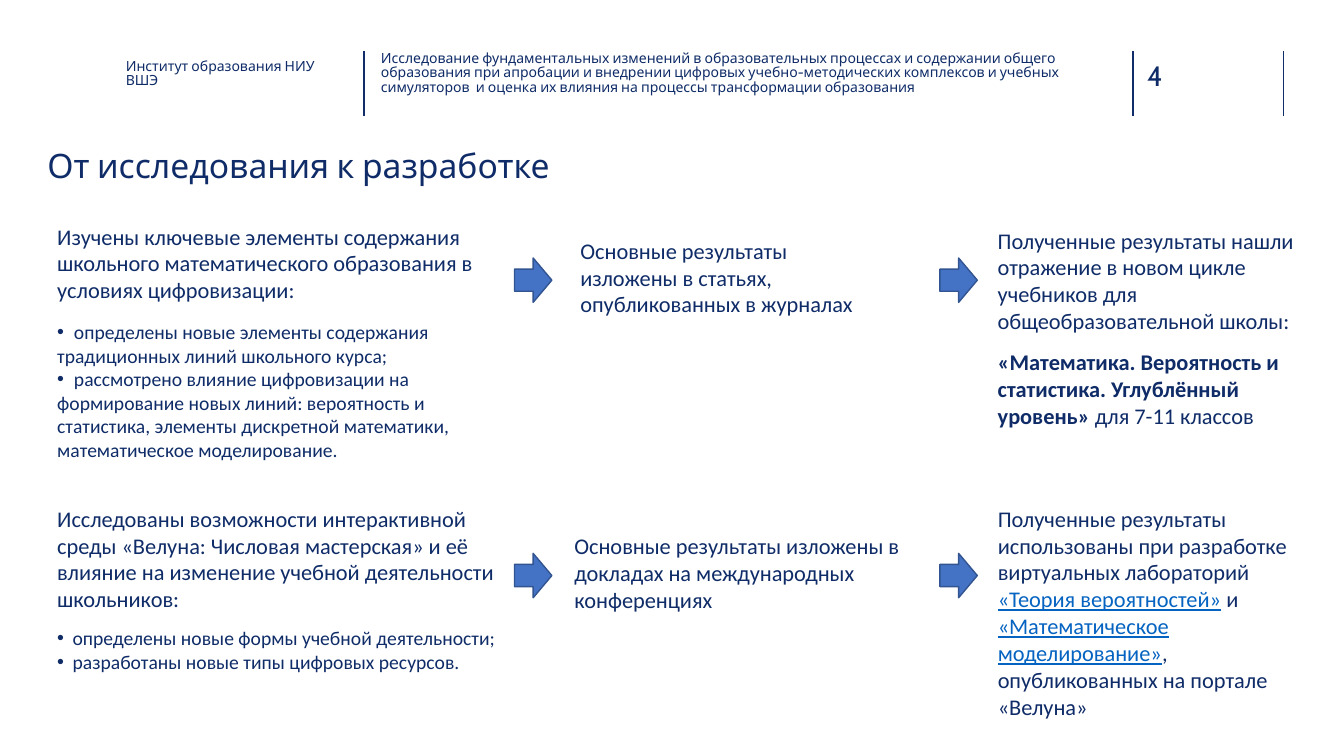
from pptx import Presentation
from pptx.dml.color import RGBColor
from pptx.enum.shapes import MSO_CONNECTOR, MSO_SHAPE
from pptx.enum.text import MSO_ANCHOR, MSO_AUTO_SIZE, PP_ALIGN
from pptx.util import Pt
from lxml import etree

LINE = MSO_CONNECTOR.STRAIGHT
ARROW = MSO_SHAPE.RIGHT_ARROW
TOP, MIDDLE = MSO_ANCHOR.TOP, MSO_ANCHOR.MIDDLE
FIXED = MSO_AUTO_SIZE.NONE
LEFT = PP_ALIGN.LEFT
NS = "http://schemas.openxmlformats.org/drawingml/2006/main"
NAVY, RULE, LINK = "0F2C68", "102D69", "0563C1"
BLUE, EDGE = "4472C4", "325491"
HEAD, BODY = "Cabin", "Calibri"


def color(code):
    return RGBColor.from_string(code)


def node(parent, tag, **attrs):
    return etree.SubElement(parent, f"{{{NS}}}{tag}", **attrs)


def add_run(para, text, size, face=BODY, tint=NAVY, bold=False, under=False):
    run = para.add_run()
    run.text = text
    font = run.font
    font.name, font.size, font.bold = face, Pt(size), bold
    font.underline = under
    font.color.rgb = color(tint)


def place(shape, box):
    shape.left, shape.top, shape.width, shape.height = map(Pt, box)


def fill_holder(shape, box, text, size, anchor=TOP, space=0.9):
    """Move a placeholder into the box and give it one plain paragraph."""
    place(shape, box)
    frame = shape.text_frame
    frame.margin_left = frame.margin_right = 0
    frame.margin_top = frame.margin_bottom = 0
    frame.word_wrap = True
    frame.auto_size = FIXED
    frame.vertical_anchor = anchor
    para = frame.paragraphs[0]
    para.alignment = LEFT
    para.space_before = Pt(0)
    para.line_spacing = space
    props = para._p.get_or_add_pPr()
    props.set("marL", "0")
    props.set("indent", "0")
    node(props, "buNone")
    add_run(para, text, size, HEAD)


def add_rule(slide, x, top, height, width=1):
    rule = slide.shapes.add_connector(LINE, Pt(x), Pt(top), Pt(x), Pt(top + height))
    rule.line.color.rgb = color(RULE)
    rule.line.width = Pt(width)
    node(rule._element.spPr, "effectLst")


def add_header(slide, box, unit, topic, number):
    """Header band: unit, topic and page number between upright rules."""
    x, y, w, h = box
    for step in (0, 549.4, w):
        add_rule(slide, x + step, y, h)
    left, right = slide.placeholders[1], slide.placeholders[2]
    fill_holder(left, (x - 170, y + 5.8, 150, 32), unit, 10, space=0.87)
    fill_holder(right, (x + 12.2, y, 523, 52), topic, 10, space=0.87)
    page = slide.shapes.add_textbox(0, 0, 0, 0)
    fill_holder(page, (x + 559.5, y + 5, 52.5, 24.5), number, 20, space=1)


def add_note(slide, box, paras, points=(), gap=9.8, tab=11):
    """Text block: paragraphs of runs, then bulleted points."""
    note = slide.shapes.add_textbox(*map(Pt, box))
    frame = note.text_frame
    frame.word_wrap = True
    for i, runs in enumerate(paras):
        para = frame.paragraphs[0] if i == 0 else frame.add_paragraph()
        if i and gap:
            para.space_before = Pt(gap)
        for text, style in runs:
            add_run(para, text, 16, **style)
    for i, text in enumerate(points):
        para = frame.add_paragraph()
        if i == 0:
            para.space_before = Pt(gap)
        props = para._p.get_or_add_pPr()
        props.set("marL", "0")
        props.set("indent", "0")
        node(props, "buFont", typeface="Arial")
        node(props, "buChar", char="•")
        stops = node(props, "tabLst")
        node(stops, "tab", pos=str(Pt(tab)), algn="l")
        add_run(para, "\t" + text, 14)


def add_arrow(slide, x, y):
    arrow = slide.shapes.add_shape(ARROW, Pt(x), Pt(y), Pt(26.7), Pt(31.7))
    arrow.shadow.inherit = False
    arrow.fill.solid()
    arrow.fill.fore_color.rgb = color(BLUE)
    arrow.line.color.rgb = color(EDGE)
    arrow.line.width = Pt(1)


def add_row(slide, box, study, middle, result, drop):
    """Study, papers and outcome, joined by two arrows."""
    x, y, w, h = box
    add_note(slide, (x, y, 329, h), **study)
    add_note(slide, (x + middle[0], y + middle[1], middle[2], 65.5),
             [[(middle[3], {})]])
    add_note(slide, (x + 671.8, y + result[0], w - 671.8, h),
             result[1], gap=result[2])
    for step in (333.7, 637.6):
        add_arrow(slide, x + step, y + drop)


def main():
    deck = Presentation()
    deck.slide_width, deck.slide_height = Pt(960), Pt(540)
    slide = deck.slides.add_slide(deck.slide_layouts[3])

    # Header and title
    add_header(
        slide, (259.9, 36.7, 656.7, 46.1), "Институт образования НИУ ВШЭ",
        "Исследование фундаментальных изменений в образовательных процессах и "
        "содержании общего образования при апробации и внедрении цифровых "
        "учебно-методических комплексов и учебных симуляторов\u00a0 и оценка их "
        "влияния на процессы трансформации образования", "4")
    fill_holder(slide.shapes.title, (33.8, 101.5, 882.7, 36),
                "От исследования к разработке", 24, MIDDLE)

    # Content of mathematics
    add_row(
        slide, (33.8, 155.5, 905.1, 184),
        dict(paras=[[("Изучены ключевые элементы содержания школьного "
                      "математического образования в условиях цифровизации:", {})]],
             points=["определены новые элементы содержания традиционных линий "
                     "школьного курса;",
                     "рассмотрено влияние цифровизации на формирование новых "
                     "линий: вероятность и статистика, элементы дискретной "
                     "математики, математическое моделирование."],
             gap=12, tab=12),
        (373.7, 10.1, 233, "Основные результаты изложены в статьях, "
                           "опубликованных в журналах"),
        (2.9, [[("Полученные результаты нашли отражение в новом цикле учебников "
                 "для общеобразовательной школы:", {})],
               [("«Математика. Вероятность и статистика. Углублённый уровень» ",
                 dict(bold=True)),
                ("для 7-11 классов", {})]], 9.8),
        28.8)

    # Interactive environment
    link = dict(tint=LINK, under=True)
    add_row(
        slide, (33.8, 357.1, 905.8, 163),
        dict(paras=[[("Исследованы возможности интерактивной среды «Велуна: "
                      "Числовая мастерская» и её влияние на изменение "
                      "учебной деятельности школьников:", {})]],
             points=["определены новые формы учебной деятельности;",
                     "разработаны новые типы цифровых ресурсов."]),
        (369.4, 19.4, 272, "Основные результаты изложены в докладах на "
                           "международных конференциях"),
        (0, [[("Полученные результаты использованы при разработке виртуальных "
               "лабораторий", {})],
             [("«Теория вероятностей»", link), (" и ", {}),
              ("«Математическое моделирование»", link),
              (", опубликованных на портале «Велуна»", {})]], 0),
        38.2)

    deck.save("out.pptx")


if __name__ == "__main__":
    main()
